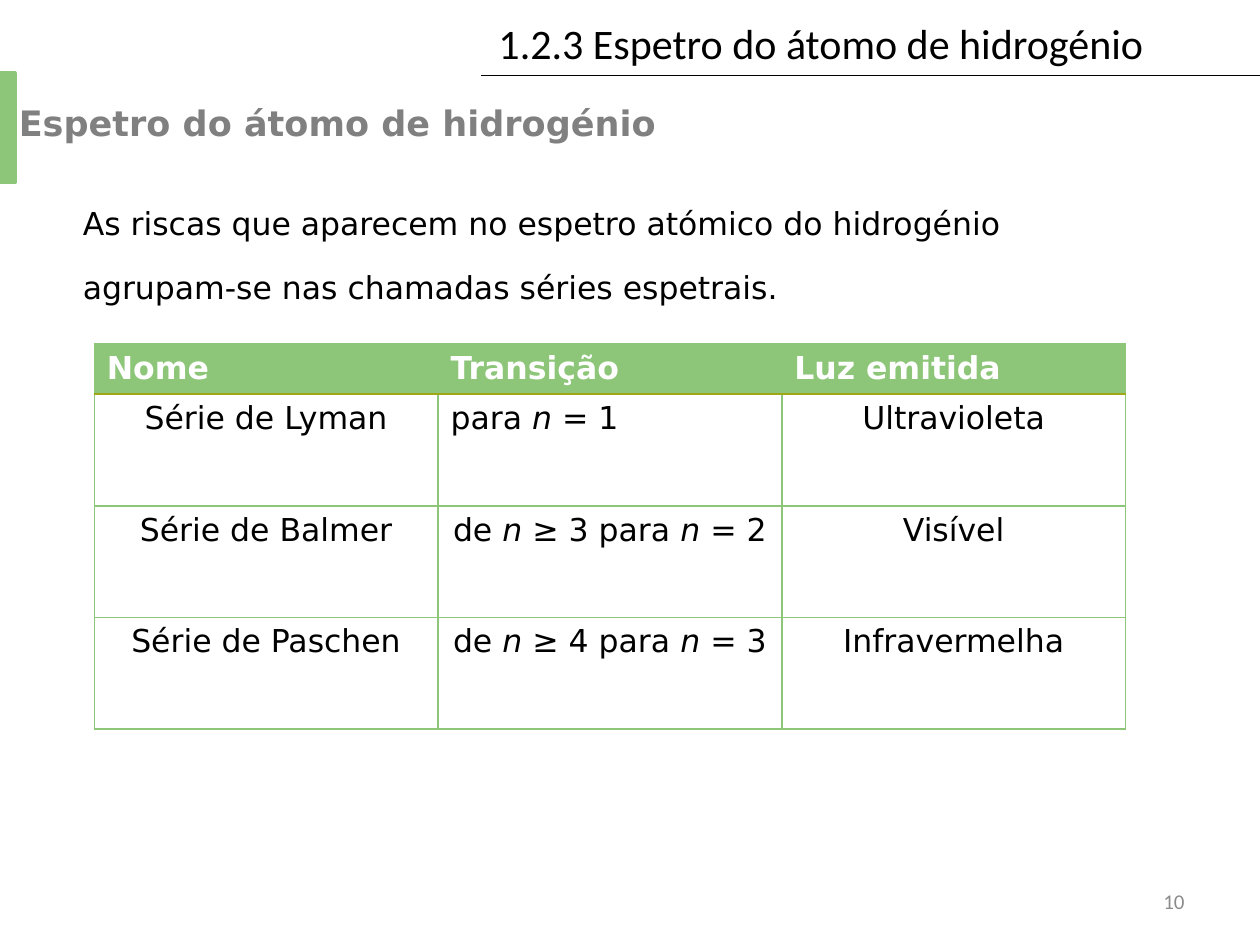
from lxml import etree
from pptx import Presentation
from pptx.dml.color import RGBColor
from pptx.enum.shapes import MSO_CONNECTOR, MSO_SHAPE
from pptx.enum.text import MSO_ANCHOR, PP_ALIGN
from pptx.oxml.ns import qn
from pptx.util import Cm, Pt

LEFT, CENTER, RIGHT = PP_ALIGN.LEFT, PP_ALIGN.CENTER, PP_ALIGN.RIGHT
TOP, MIDDLE = MSO_ANCHOR.TOP, MSO_ANCHOR.MIDDLE
HEADER_FONT, BODY_FONT = "Calibri", "DejaVu Sans"
COLORS = {
    "black": "000000",
    "white": "FFFFFF",
    "green": "8DC679",
    "olive": "A1A818",
    "heading": "808080",
    "number": "8C8C8C",
}

CHAPTER = "1.2.3 Espetro do átomo de hidrogénio"
HEADING = "Espetro do átomo de hidrogénio"
INTRODUCTION = ("As riscas que aparecem no espetro atómico do hidrogénio "
                "agrupam-se nas chamadas séries espetrais.")
PAGE_NUMBER = "10"
TABLE_HEADER = ["Nome", "Transição", "Luz emitida"]
# The transitions are lists of runs; the variable n is set in italics.
SERIES = [
    (["Série de Lyman"], ["para ", "n", " = 1"], ["Ultravioleta"]),
    (["Série de Balmer"], ["de ", "n", " ≥ 3 para ", "n", " = 2"], ["Visível"]),
    (["Série de Paschen"], ["de ", "n", " ≥ 4 para ", "n", " = 3"], ["Infravermelha"]),
]

TABLE_LEFT, TABLE_TOP = 1.9, 6.93
COLUMN_WIDTH = 6.93
HEADER_HEIGHT, ROW_HEIGHT = 1.01, 2.25
RULE_Y = 1.52
RULES = [(9.7, 25.4), (14.5, 24.84)]


def rgb(name):
    return RGBColor.from_string(COLORS[name])


def format_run(run, size, font, color, bold=False, italic=False):
    run.font.size = Pt(size)
    run.font.name = font
    run.font.color.rgb = rgb(color)
    run.font.bold = bold
    run.font.italic = italic


def add_text(slide, text, box, size, font, color, bold=False,
             align=LEFT, anchor=TOP, wrap=True, line_spacing=None):
    text_frame = slide.shapes.add_textbox(*map(Cm, box)).text_frame
    text_frame.word_wrap = wrap
    text_frame.vertical_anchor = anchor
    text_frame.text = text
    paragraph = text_frame.paragraphs[0]
    paragraph.alignment = align
    paragraph.line_spacing = line_spacing
    format_run(paragraph.runs[0], size, font, color, bold)


def add_rule(slide, start, end):
    rule = slide.shapes.add_connector(
        MSO_CONNECTOR.STRAIGHT, Cm(end), Cm(RULE_Y), Cm(start), Cm(RULE_Y))
    rule.line.color.rgb = rgb("black")
    rule.line.width = Pt(0.75)
    etree.SubElement(rule._element.spPr, qn("a:effectLst"))


def set_borders(cell, top, bottom):
    properties = cell._tc.get_or_add_tcPr()
    sides = [("a:lnL", "green"), ("a:lnR", "green"), ("a:lnT", top), ("a:lnB", bottom)]
    for position, (tag, color) in enumerate(sides):
        border = etree.Element(qn(tag), w=str(Pt(1)))
        fill = etree.SubElement(border, qn("a:solidFill"))
        etree.SubElement(fill, qn("a:srgbClr"), val=COLORS[color])
        properties.insert(position, border)


def fill_cell(cell, parts, align, color, bold=False):
    paragraph = cell.text_frame.paragraphs[0]
    paragraph.alignment = align
    for part in parts:
        run = paragraph.add_run()
        run.text = part
        format_run(run, 18, BODY_FONT, color, bold, italic=part == "n")


def add_series_table(slide):
    heights = [HEADER_HEIGHT] + [ROW_HEIGHT] * len(SERIES)
    columns = len(TABLE_HEADER)
    table = slide.shapes.add_table(
        len(heights), columns, Cm(TABLE_LEFT), Cm(TABLE_TOP),
        Cm(COLUMN_WIDTH * columns), Cm(sum(heights))).table
    table.horz_banding = False
    for column in table.columns:
        column.width = Cm(COLUMN_WIDTH)
    for row, height in zip(table.rows, heights):
        row.height = Cm(height)

    for column, title in enumerate(TABLE_HEADER):
        cell = table.cell(0, column)
        cell.fill.solid()
        cell.fill.fore_color.rgb = rgb("green")
        set_borders(cell, "green", "olive")
        fill_cell(cell, [title], LEFT, "white", bold=True)

    for row, series in enumerate(SERIES, start=1):
        for column, parts in enumerate(series):
            cell = table.cell(row, column)
            cell.fill.background()
            set_borders(cell, "olive" if row == 1 else "green", "green")
            align = LEFT if (row, column) == (1, 1) else CENTER
            fill_cell(cell, parts, align, "black")


def add_accent_bar(slide):
    bar = slide.shapes.add_shape(
        MSO_SHAPE.RECTANGLE, Cm(-0.03), Cm(1.47), Cm(0.33), Cm(2.21))
    bar.shadow.inherit = False
    bar.fill.solid()
    bar.fill.fore_color.rgb = rgb("green")
    bar.line.color.rgb = rgb("green")
    bar.line.width = Pt(2)


def main():
    presentation = Presentation()
    presentation.slide_width, presentation.slide_height = Cm(25.4), Cm(19.05)
    slide = presentation.slides.add_slide(presentation.slide_layouts[6])

    add_text(slide, CHAPTER, (9.8, 0.23, 13.61, 1.27), 24, HEADER_FONT, "black", wrap=False)
    for start, end in RULES:
        add_rule(slide, start, end)
    add_text(slide, PAGE_NUMBER, (18.2, 17.65, 5.93, 1.02), 12, HEADER_FONT, "number",
             align=RIGHT, anchor=MIDDLE)
    add_text(slide, INTRODUCTION, (1.42, 3.45, 21.9, 3.18), 18, BODY_FONT, "black",
             line_spacing=1.7)
    add_series_table(slide)
    add_accent_bar(slide)
    add_text(slide, HEADING, (0.13, 1.92, 16.2, 1.24), 20, BODY_FONT, "heading", bold=True)

    presentation.save("out.pptx")


if __name__ == "__main__":
    main()
